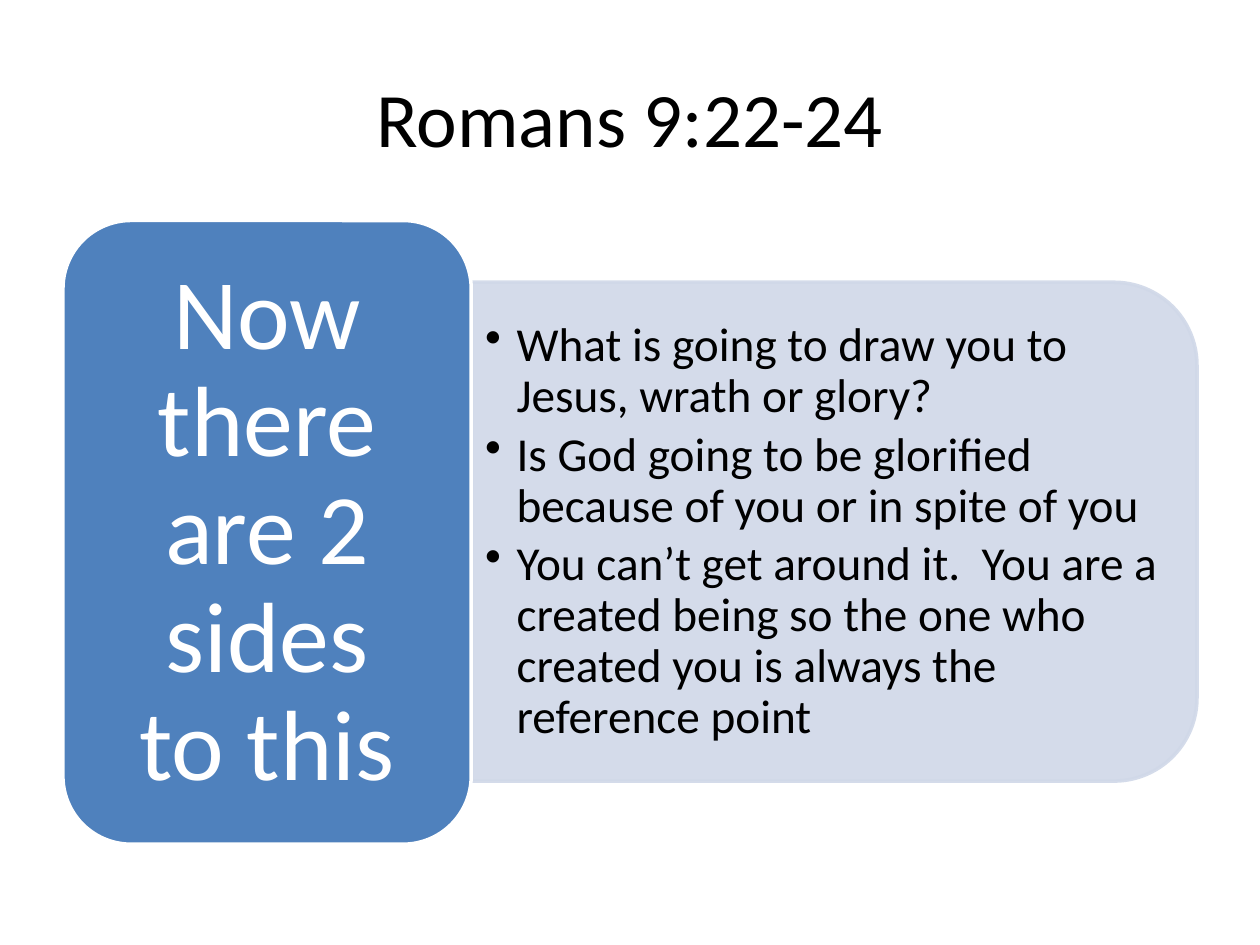
import pptx
import pptx.util
import pptx.dml.color
import pptx.enum.shapes
import pptx.enum.text
import pptx.oxml
import pptx.oxml.ns
from pptx.util import Inches


def color(hex_value):
    return pptx.dml.color.RGBColor.from_string(hex_value)


def write(frame, lines, paragraph_format, size, hex_value, margins):
    frame_format = {
        "word_wrap": True,
        "vertical_anchor": pptx.enum.text.MSO_ANCHOR.MIDDLE,
        "margin_left": Inches(margins[0]),
        "margin_right": Inches(margins[0]),
        "margin_top": Inches(margins[1]),
        "margin_bottom": Inches(margins[1]),
    }
    for name, value in frame_format.items():
        setattr(frame, name, value)
    for index, line in enumerate(lines):
        paragraph = frame.paragraphs[0] if index == 0 else frame.add_paragraph()
        for name, value in paragraph_format.items():
            setattr(paragraph, name, value)
        run = paragraph.add_run()
        run.text = line
        for name, value in {"name": "Calibri", "size": pptx.util.Pt(size)}.items():
            setattr(run.font, name, value)
        run.font.color.rgb = color(hex_value)


CENTER = pptx.enum.text.PP_ALIGN.CENTER
LEFT = pptx.enum.text.PP_ALIGN.LEFT
SHAPES = pptx.enum.shapes.MSO_SHAPE

deck = pptx.Presentation()
deck.slide_width, deck.slide_height = Inches(10), Inches(7.5)
slide = deck.slides.add_slide(deck.slide_layouts[5])

heading = slide.shapes.title
heading_place = {"left": 0.5, "top": 0.3, "width": 9, "height": 1.25}
for name, value in heading_place.items():
    setattr(heading, name, Inches(value))
write(heading.text_frame, ["Romans 9:22-24"], {"alignment": CENTER}, 44, "000000", (0.1, 0.05))

questions_panel = slide.shapes.add_shape(
    SHAPES.ROUND_2_SAME_RECTANGLE, Inches(4.64), Inches(1.34), Inches(3.96), Inches(5.76))
questions_panel.rotation = 90
sides_panel = slide.shapes.add_shape(
    SHAPES.ROUNDED_RECTANGLE, Inches(0.5), Inches(1.75), Inches(3.24), Inches(4.95))

for panel, fill, line in [
    (questions_panel, "D0D8E8", "D0D8E8"),
    (sides_panel, "4F81BD", "FFFFFF"),
]:
    panel.shadow.inherit = False
    panel.fill.solid()
    panel.fill.fore_color.rgb = color(fill)
    panel.line.color.rgb = color(line)
    panel.line.width = pptx.util.Pt(2)

for tint in questions_panel._element.spPr.iter(pptx.oxml.ns.qn("a:srgbClr")):
    tint.append(pptx.oxml.parse_xml(
        f'<a:alpha {pptx.oxml.ns.nsdecls("a")} val="90000"/>'))

write(
    sides_panel.text_frame,
    ["Now there are 2 sides to this"],
    {"alignment": CENTER, "line_spacing": 0.9},
    57, "FFFFFF", (0.24, 0.12))

questions = slide.shapes.add_textbox(Inches(3.74), Inches(2.44), Inches(5.57), Inches(3.57))
write(
    questions.text_frame,
    [
        "What is going to draw you to Jesus, wrath or glory?",
        "Is God going to be glorified because of you or in spite of you",
        "You can’t get around it.  You are a created being so the one who "
        "created you is always the reference point",
    ],
    {"alignment": LEFT, "line_spacing": 0.9, "space_after": pptx.util.Pt(4), "level": 1},
    27, "000000", (0.11, 0.06))
for question in questions.text_frame.paragraphs:
    properties = question._p.get_or_add_pPr()
    for name, value in {"marL": Inches(0.25), "indent": Inches(-0.25)}.items():
        properties.set(name, str(int(value)))
    properties.append(pptx.oxml.parse_xml(
        f'<a:buChar {pptx.oxml.ns.nsdecls("a")} char="•"/>'))

deck.save("out.pptx")
